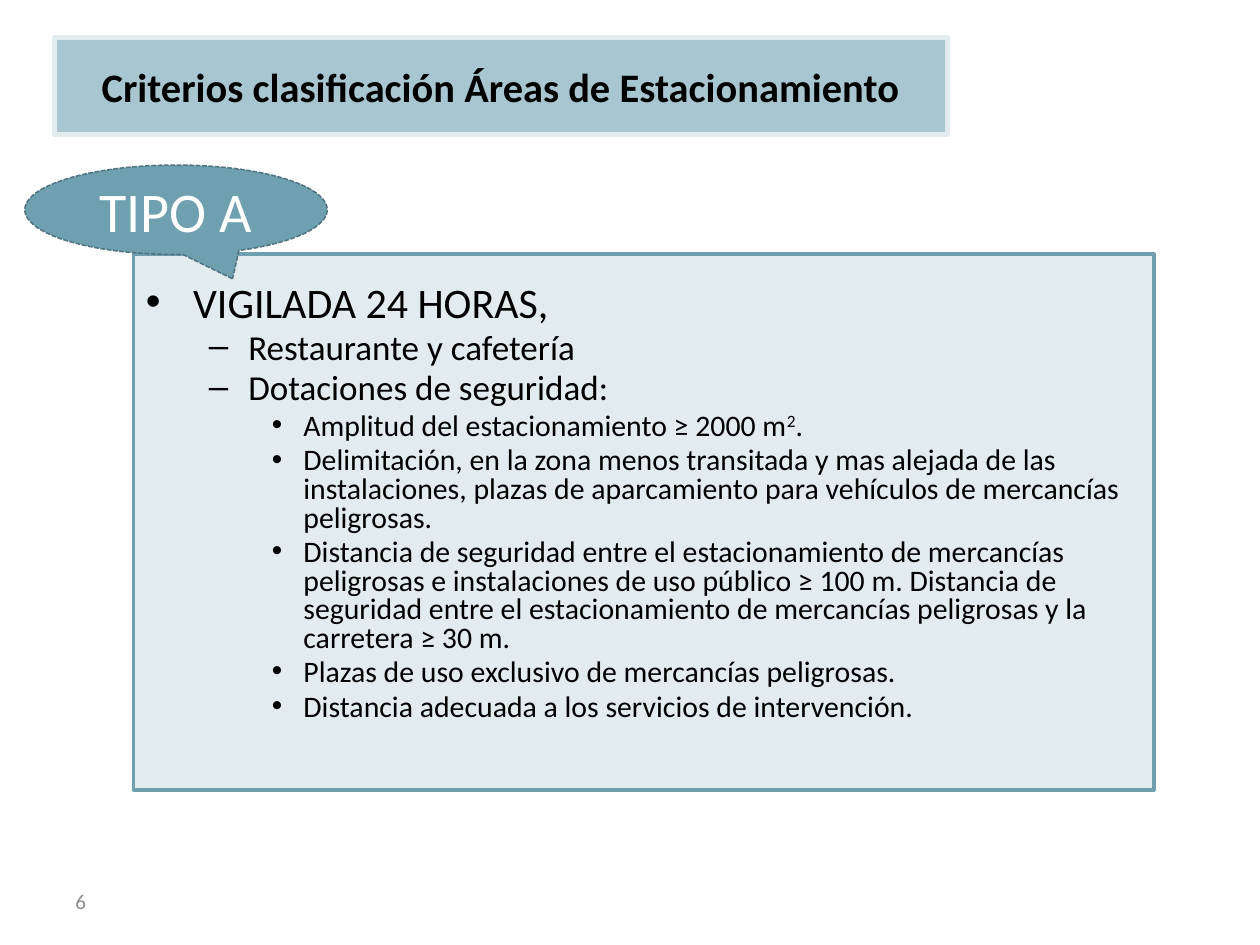
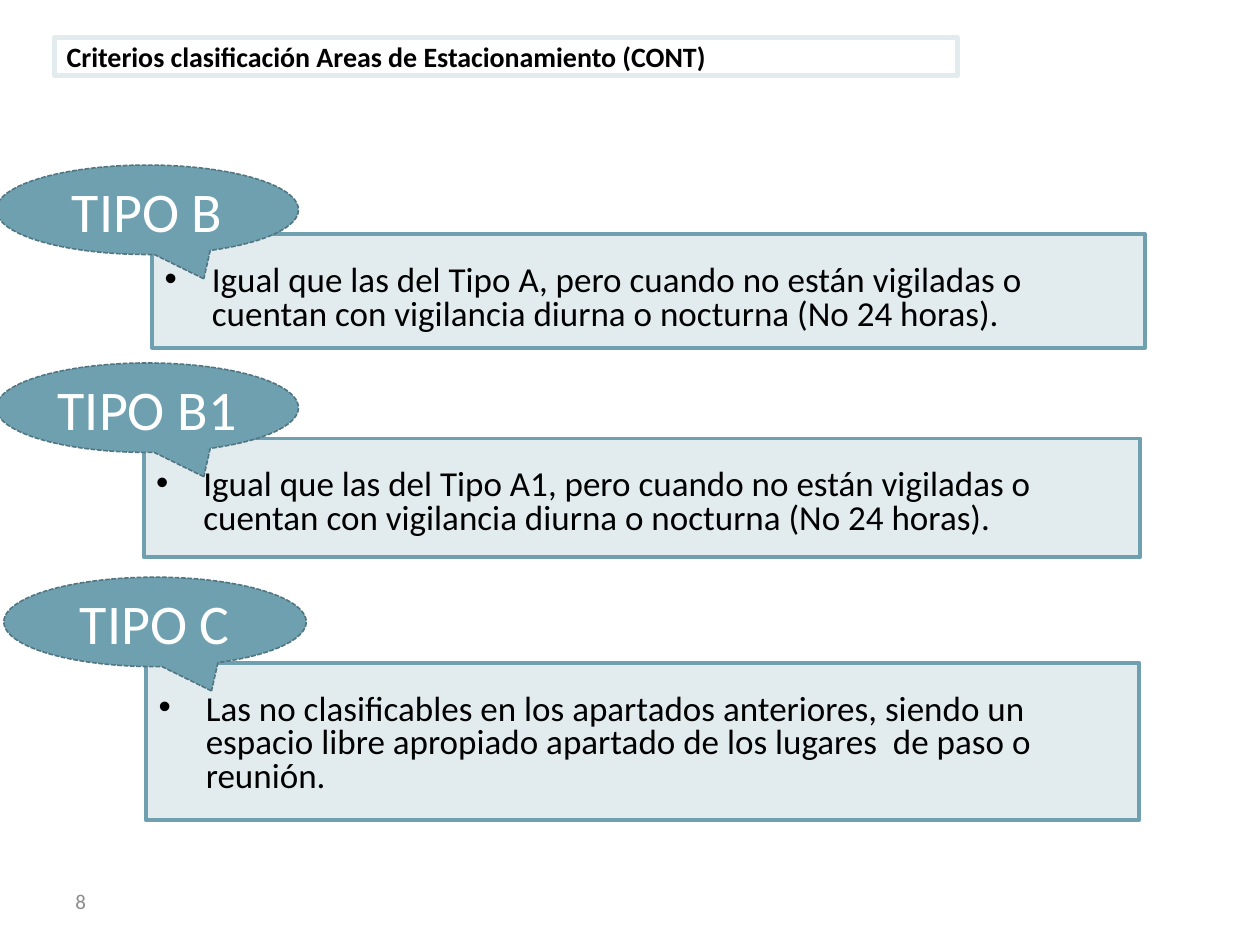
from dataclasses import dataclass

from lxml import etree
from pptx import Presentation
from pptx.dml.color import RGBColor
from pptx.enum.dml import MSO_LINE
from pptx.enum.shapes import MSO_SHAPE
from pptx.enum.text import MSO_ANCHOR, PP_ALIGN
from pptx.oxml.ns import qn
from pptx.util import Pt

RECTANGLE, CALLOUT = MSO_SHAPE.RECTANGLE, MSO_SHAPE.OVAL_CALLOUT
SHORT_DASH = MSO_LINE.SQUARE_DOT
LEFT, CENTER = PP_ALIGN.LEFT, PP_ALIGN.CENTER
TOP, MIDDLE = MSO_ANCHOR.TOP, MSO_ANCHOR.MIDDLE


@dataclass(frozen=True)
class Theme:
    font: str = "Calibri"
    ink: str = "000000"
    white: str = "FFFFFF"
    gray: str = "8C8C8C"
    pale: str = "E2ECEF"
    band: str = "A8C6D0"
    teal: str = "6EA0B0"
    dark_teal: str = "517682"
    label_size: float = 32
    heading_size: float = 24
    item_size: float = 20
    detail_size: float = 17
    number_size: float = 12


THEME = Theme()

# Content: lines are (level, size, text); ^ marks surround a superscript
SLIDES = [
    {
        "number": "6",
        "title": "Criterios clasificación Áreas de Estacionamiento",
        "title_box": (31, 21.6, 510.5, 55.4),
        "title_format": {"size": 23.1, "align": CENTER},
        "title_fill": THEME.band,
        "cards": [
            ("TIPO A", (14.2, 94.3), (76.3, 145.4, 583.2, 306), [
                (0, THEME.heading_size, "VIGILADA 24 HORAS,"),
                (1, THEME.item_size, "Restaurante y cafetería"),
                (1, THEME.item_size, "Dotaciones de seguridad:"),
                (2, THEME.detail_size, "Amplitud del estacionamiento ≥ 2000 m^2^."),
                (2, THEME.detail_size,
                 "Delimitación, en la zona menos transitada y mas alejada de las "
                 "instalaciones, plazas de aparcamiento para vehículos de "
                 "mercancías peligrosas."),
                (2, THEME.detail_size,
                 "Distancia de seguridad entre el estacionamiento de mercancías "
                 "peligrosas e instalaciones de uso público ≥ 100 m. Distancia de "
                 "seguridad entre el estacionamiento de mercancías peligrosas y "
                 "la carretera ≥ 30 m."),
                (2, THEME.detail_size,
                 "Plazas de uso exclusivo de mercancías peligrosas."),
                (2, THEME.detail_size,
                 "Distancia adecuada a los servicios de intervención."),
            ]),
        ],
    },
    {
        "number": "8",
        "title": "Criterios clasificación Areas de Estacionamiento (CONT)",
        "title_box": (31, 21.6, 516.2, 21.6),
        "title_format": {"size": 16, "align": LEFT},
        "title_fill": None,
        "cards": [
            ("TIPO B", (-2.2, 94.3), (87, 133.9, 567.4, 64.8), [
                (0, THEME.item_size,
                 "Igual que las del Tipo A, pero cuando no están vigiladas o "
                 "cuentan con vigilancia diurna o nocturna (No 24 horas)."),
            ]),
            ("TIPO B1", (-2.2, 207.4), (82.1, 250.6, 569.5, 67.7), [
                (0, THEME.item_size,
                 "Igual que las del Tipo A1, pero cuando no están vigiladas o "
                 "cuentan con vigilancia diurna o nocturna (No 24 horas)."),
            ]),
            ("TIPO C", (2.2, 329.8), (83.5, 378.7, 567.4, 90), [
                (0, THEME.item_size,
                 "Las no clasificables en los apartados anteriores, siendo un "
                 "espacio libre apropiado apartado de los lugares  de paso o "
                 "reunión."),
            ]),
        ],
    },
]

# Shared measures
NUMBER_BOX = (36, 500.4, 167.8, 28.8)
CALLOUT_SIZE = (172.8, 51.1)
CALLOUT_TAIL = (0.187, 0.772)
CARD_TOP_INSET = 18
LINE_SPACING, SPACE_RATIO = 0.8, 0.2
# Per level: bullet, left margin, hanging indent
LEVELS = [("•", 27, 27), ("–", 58.5, 22.5), ("•", 90, 18)]


def color(value):
    return RGBColor.from_string(value)


def add_text(para, text, *, size, ink=THEME.ink, bold=False, align=LEFT):
    """Fill a paragraph with formatted text."""
    para.alignment = align
    for index, piece in enumerate(text.split("^")):
        span = para.add_run()
        span.text = piece
        span.font.name = THEME.font
        span.font.size = Pt(size)
        span.font.bold = bold
        span.font.color.rgb = color(ink)
        if index % 2:
            span.font._element.set("baseline", "30000")


def add_box(page, kind, place, *, fill, line, weight, anchor=MIDDLE):
    box = page.shapes.add_shape(kind, *map(Pt, place))
    box.shadow.inherit = False
    if fill:
        box.fill.solid()
        box.fill.fore_color.rgb = color(fill)
    else:
        box.fill.background()
    box.line.color.rgb = color(line)
    box.line.width = Pt(weight)
    box.text_frame.word_wrap = True
    box.text_frame.vertical_anchor = anchor
    return box


def set_bullet(para, level):
    mark, margin, hanging = LEVELS[level]
    para.level = level
    properties = para._p.get_or_add_pPr()
    properties.set("marL", str(Pt(margin)))
    properties.set("indent", str(-Pt(hanging)))
    etree.SubElement(properties, qn("a:buFont")).set("typeface", "Arial")
    etree.SubElement(properties, qn("a:buChar")).set("char", mark)


def add_card(page, label, corner, place, lines):
    # Panel with bulleted lines
    panel = add_box(page, RECTANGLE, place, fill=THEME.pale, line=THEME.teal,
                    weight=2.25, anchor=TOP)
    frame = panel.text_frame
    frame.margin_top = Pt(CARD_TOP_INSET)
    for index, (level, size, text) in enumerate(lines):
        para = frame.add_paragraph() if index else frame.paragraphs[0]
        para.line_spacing = LINE_SPACING
        para.space_before = Pt(size * SPACE_RATIO if index else 0)
        set_bullet(para, level)
        add_text(para, text, size=size)

    # Callout naming the type
    callout = add_box(page, CALLOUT, corner + CALLOUT_SIZE, fill=THEME.teal,
                      line=THEME.dark_teal, weight=0.9)
    callout.line.dash_style = SHORT_DASH
    for index, offset in enumerate(CALLOUT_TAIL):
        callout.adjustments[index] = offset
    callout.text_frame.word_wrap = False
    add_text(callout.text_frame.paragraphs[0], label, size=THEME.label_size,
             ink=THEME.white, align=CENTER)


def add_page(deck, content):
    page = deck.slides.add_slide(deck.slide_layouts[6])

    # Page number
    number = page.shapes.add_textbox(*map(Pt, NUMBER_BOX)).text_frame
    number.word_wrap = True
    number.vertical_anchor = MIDDLE
    add_text(number.paragraphs[0], content["number"], size=THEME.number_size,
             ink=THEME.gray)

    # Title band
    title = add_box(page, RECTANGLE, content["title_box"],
                    fill=content["title_fill"], line=THEME.pale, weight=3)
    add_text(title.text_frame.paragraphs[0], content["title"], bold=True,
             **content["title_format"])

    for card in content["cards"]:
        add_card(page, *card)


def main():
    deck = Presentation()
    deck.slide_width, deck.slide_height = Pt(720), Pt(540)
    for content in SLIDES:
        add_page(deck, content)
    deck.save("out.pptx")


if __name__ == "__main__":
    main()
